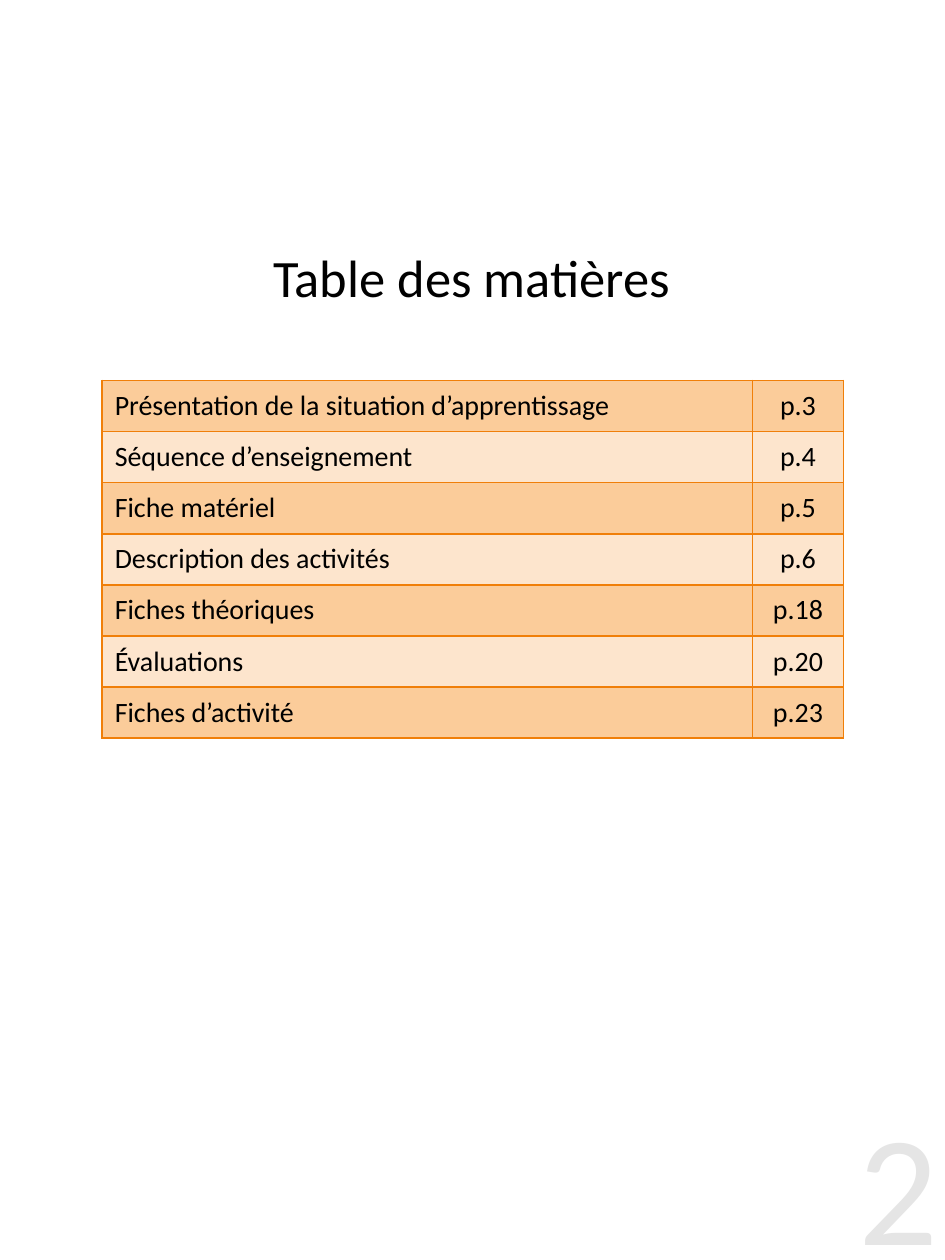
"""Build the table of contents slide."""
from lxml import etree
from pptx import Presentation
from pptx import util as u
from pptx.dml.color import RGBColor
from pptx.enum import text
from pptx.oxml.ns import qn


def color(hex_value):
    return RGBColor.from_string(hex_value)


def write(text_frame, content, size, hex_value, alignment):
    text_frame.text = content
    paragraph = text_frame.paragraphs[0]
    paragraph.alignment = alignment
    font = paragraph.runs[0].font
    font.name = "Calibri"
    font.size = u.Pt(size)
    font.color.rgb = color(hex_value)


ENTRIES = [
    ("Présentation de la situation d’apprentissage", "p.3"),
    ("Séquence d’enseignement", "p.4"),
    ("Fiche matériel", "p.5"),
    ("Description des activités", "p.6"),
    ("Fiches théoriques", "p.18"),
    ("Évaluations", "p.20"),
    ("Fiches d’activité", "p.23"),
]
BAND_FILLS = ["FBCC9A", "FDE5CD"]
BORDER = "F07F09"
ALIGNMENTS = [text.PP_ALIGN.LEFT, text.PP_ALIGN.CENTER]
COLUMN_WIDTHS = [u.Cm(13.11), u.Cm(1.83)]
ROW_HEIGHT = u.Cm(1.03)

presentation = Presentation()
presentation.slide_width = u.Cm(19.05)
presentation.slide_height = u.Cm(25.4)
slide = presentation.slides.add_slide(presentation.slide_layouts[6])

title = slide.shapes.add_textbox(u.Cm(3.58), u.Cm(4.37), u.Cm(11.86), u.Cm(2.41))
title.text_frame.word_wrap = True
title.text_frame.vertical_anchor = text.MSO_ANCHOR.MIDDLE
write(title.text_frame, "Table des matières", 30, "000000", text.PP_ALIGN.CENTER)

table = slide.shapes.add_table(
    len(ENTRIES), len(COLUMN_WIDTHS), u.Cm(2.06), u.Cm(7.67),
    sum(COLUMN_WIDTHS), ROW_HEIGHT * len(ENTRIES),
).table
for column, width in zip(table.columns, COLUMN_WIDTHS):
    column.width = width

for row_index, entry in enumerate(ENTRIES):
    table.rows[row_index].height = ROW_HEIGHT
    for column_index, content in enumerate(entry):
        cell = table.cell(row_index, column_index)
        cell.vertical_anchor = text.MSO_ANCHOR.MIDDLE
        write(cell.text_frame, content, 16, "000000", ALIGNMENTS[column_index])
        properties = cell._tc.get_or_add_tcPr()
        for side in ("a:lnL", "a:lnR", "a:lnT", "a:lnB"):
            line = etree.SubElement(properties, qn(side), w=str(u.Pt(1)))
            solid = etree.SubElement(line, qn("a:solidFill"))
            etree.SubElement(solid, qn("a:srgbClr"), val=BORDER)
        cell.fill.solid()
        cell.fill.fore_color.rgb = color(BAND_FILLS[row_index % 2])

page_number = slide.shapes.add_textbox(u.Cm(17.22), u.Cm(21.93), u.Cm(1.8), u.Cm(3.4))
frame = page_number.text_frame
frame.margin_left = frame.margin_right = frame.margin_top = frame.margin_bottom = 0
frame.word_wrap = True
write(frame, "2", 90, "E5E5E5", text.PP_ALIGN.CENTER)

presentation.save("out.pptx")
